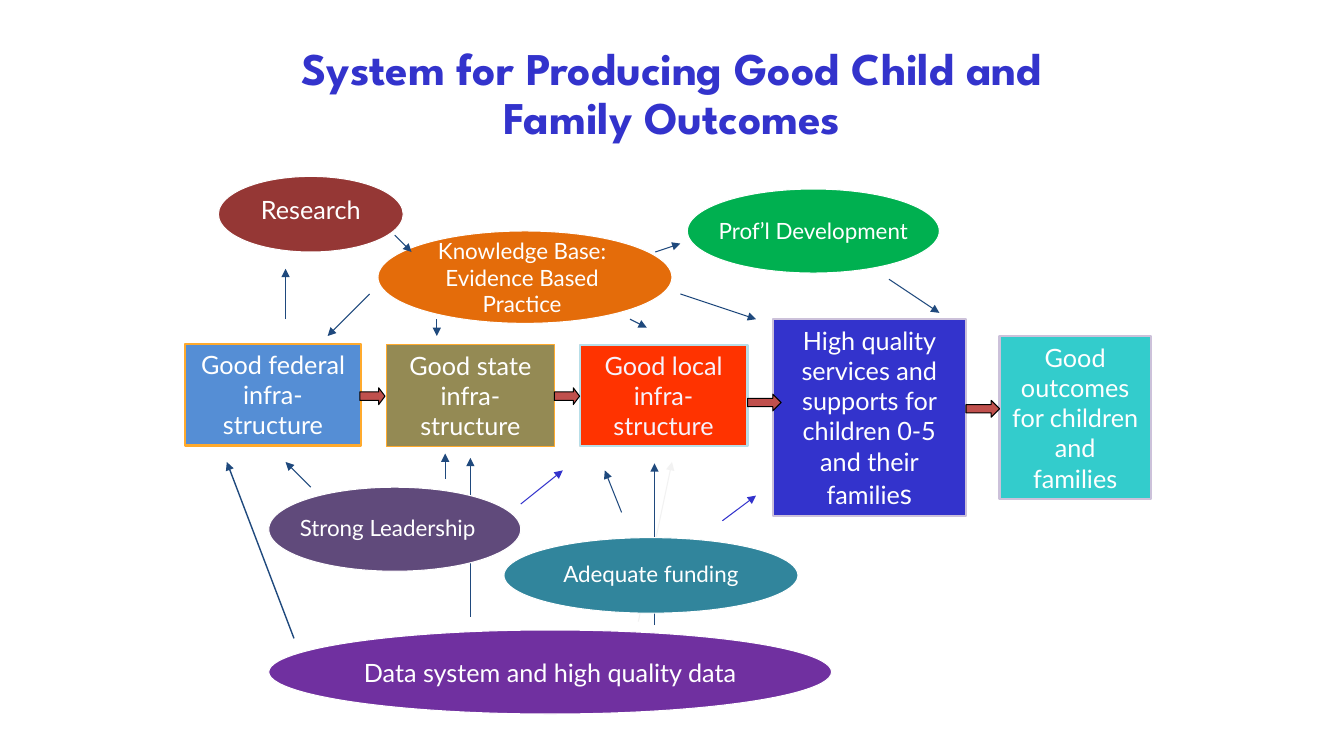
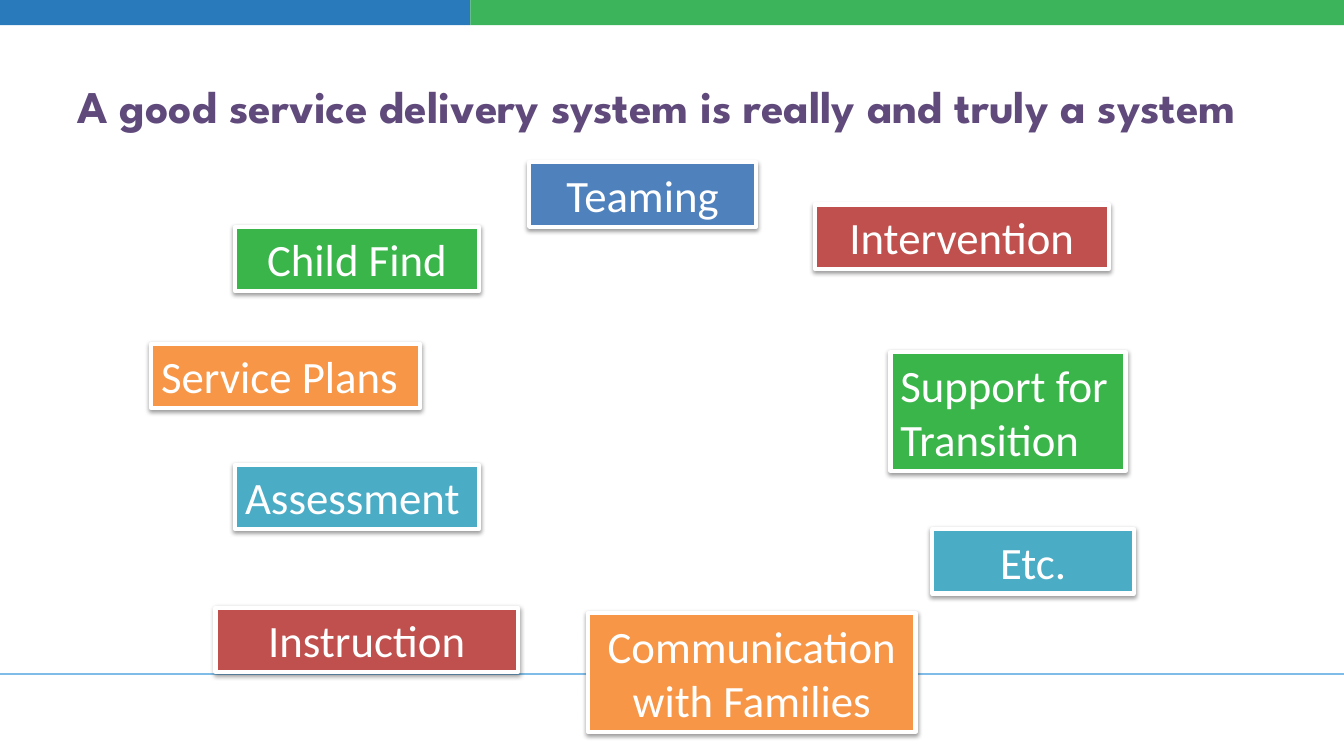
from lxml import etree
from pptx import Presentation
from pptx.dml.color import RGBColor
from pptx.enum.shapes import MSO_CONNECTOR, MSO_SHAPE
from pptx.enum.text import MSO_ANCHOR, MSO_AUTO_SIZE, PP_ALIGN
from pptx.oxml import parse_xml
from pptx.oxml.ns import nsdecls, qn
from pptx.util import Pt

RECT, OVAL, BLOCK_ARROW = MSO_SHAPE.RECTANGLE, MSO_SHAPE.OVAL, MSO_SHAPE.RIGHT_ARROW
STRAIGHT = MSO_CONNECTOR.STRAIGHT
LEFT, CENTER = PP_ALIGN.LEFT, PP_ALIGN.CENTER
MIDDLE, NO_FIT = MSO_ANCHOR.MIDDLE, MSO_AUTO_SIZE.NONE

W, H = 960, 540
TITLE_FONT, BODY_FONT, LABEL_FONT = "League Spartan", "Lato", "Calibri"
WHITE, BLACK = "FFFFFF", "000000"
NAVY, INDIGO, PALE, PLUM = "1F497D", "3333CC", "F2F2F2", "604A7B"
RED, ORANGE, GREEN, AQUA, BLUE = "C0504D", "F79646", "39B54A", "4BACC6", "4F81BD"
GOLD, LILAC = "FFAA2D", "CCC1DA"

# Lengths are points; places are (left, top, width, height).
SYSTEM_TITLE = "System for Producing Good Child and Family Outcomes"
STAGES = [  # text, place, fill, outline, outline width, text colour
    ("Good federal infra-structure", (132, 245.5, 126, 72.7), "558ED5", GOLD, 1.5, WHITE),
    ("Good state infra-structure", (276, 246.2, 120, 72.7), "948A54", GOLD, 1, WHITE),
    ("Good local infra-structure", (414, 246.2, 120, 72.7), "FF3300", "B7DEE8", 1.5, "F7F2FC"),
    ("High quality services and supports for children 0-5 and their familie",
     (552, 228, 138, 140.4), INDIGO, LILAC, 1.5, WHITE),
    ("Good outcomes for children and families",
     (714, 240, 108, 116.6), "33CCCC", LILAC, 1.5, WHITE),
]
SERVICES, LAST_LETTER = 3, "s"
STAGE_ARROWS = [  # place, head proportion
    ((257, 277, 18, 12), 0.375),
    ((396, 277, 18, 12), 0.375),
    ((534, 281.5, 24, 12), 0.5),
    ((690, 286, 24, 12), 0.5),
]
SUPPORTS = [  # text, place, fill, size, wraps, (right inset, bottom inset)
    ("Strong Leadership", (192, 348, 180, 60), PLUM, 16, False, (10, 3)),
    ("Knowledge Base: Evidence Based Practice",
     (270, 165, 210, 66), "E46C0A", 16, True, (4, 0)),
    ("Data system and high quality data", (192, 450, 402, 60), "7030A0", 18, False, (0, 0)),
    ("Research", (156, 126, 132, 54), "953735", 18, False, (0, 7)),
    ("Prof’l Development", (491, 135, 180, 60), "00B050", 16, False, (0, 0)),
    ("Adequate funding", (360, 384, 210, 54), "31859C", 16, False, (0, 3)),
]
ARROWS_BEHIND = [  # x1, y1, x2, y2, colour, width
    (467.5, 446.5, 467.5, 331, NAVY, 1),
    (336, 440.5, 336, 327, NAVY, 1),
    (456, 444, 480, 330, PALE, 0.75),
]
ARROWS_FRONT = [
    (516, 372, 540, 354, INDIGO, 0.75),
    (372, 360, 402, 336, INDIGO, 0.75),
    (635, 199.5, 671, 223.5, NAVY, 0.75),
    (222, 348, 204, 330, NAVY, 0.75),
    (318, 342, 318, 324, NAVY, 0.75),
    (204, 228, 204, 192, NAVY, 0.75),
    (282, 168, 294, 180, NAVY, 0.75),
    (468, 180, 486, 174, NAVY, 0.75),
    (264, 210, 234, 240, NAVY, 0.75),
    (312, 228, 312, 240, NAVY, 0.75),
    (450, 228, 462, 234, NAVY, 0.75),
    (486, 210, 540, 228, NAVY, 0.75),
    (210, 456, 162, 330, NAVY, 1),
    (444, 366, 432, 336, NAVY, 0.75),
]

DELIVERY_TITLE = "A good service delivery system is really and truly a system"
BANDS = [((0, 0, 336, 18), "297ABB"), ((336, 0, W - 336, 18), "3CB45C")]
RULE_Y, RULE_COLOR = 481.7, "7FBCE7"
LINE_HEIGHTS = {1: 46, 2: 84.8}
LABELS = [  # text, left, top, width, lines, fill, alignment
    ("Communication with Families", 420, 438, 234, 2, ORANGE, CENTER),
    ("Instruction", 154, 434, 216, 1, RED, CENTER),
    ("Assessment", 168, 332, 174, 1, AQUA, LEFT),
    ("Service Plans", 108, 245.5, 192, 1, ORANGE, LEFT),
    ("Child Find", 168, 162, 174, 1, GREEN, CENTER),
    ("Teaming", 378, 116, 162, 1, BLUE, CENTER),
    ("Intervention", 582, 146, 210, 1, RED, CENTER),
    ("Support for Transition", 636, 251.5, 168, 2, GREEN, LEFT),
    ("Etc.", 666, 378, 144, 1, AQUA, CENTER),
]


def rgb(color):
    return RGBColor.from_string(color)


def style_text(sp, text, font, size, color, align=CENTER, bold=False, wrap=True):
    tf = sp.text_frame
    tf.text = text
    tf.word_wrap = wrap
    tf.auto_size = NO_FIT
    tf.vertical_anchor = MIDDLE
    p = tf.paragraphs[0]
    p.alignment = align
    f = p.runs[0].font
    f.name, f.size, f.bold = font, Pt(size), bold
    f.color.rgb = rgb(color)
    return tf


def add_titled_slide(prs, text, place, color, align):
    slide = prs.slides.add_slide(prs.slide_layouts[5])
    sp = slide.shapes.title
    sp.left, sp.top, sp.width, sp.height = map(Pt, place)
    tf = style_text(sp, text, TITLE_FONT, 32.4, color, align, bold=True)
    tf.paragraphs[0].line_spacing = 0.9
    return slide


def add_box(slide, kind, place, fill, line=None, width=0.75):
    sp = slide.shapes.add_shape(kind, *map(Pt, place))
    sp.shadow.inherit = False
    sp.fill.solid()
    sp.fill.fore_color.rgb = rgb(fill)
    if line:
        sp.line.color.rgb = rgb(line)
        sp.line.width = Pt(width)
    else:
        sp.line.fill.background()
    return sp


def add_line(slide, x1, y1, x2, y2, color, width, arrow=True):
    c = slide.shapes.add_connector(STRAIGHT, Pt(x1), Pt(y1), Pt(x2), Pt(y2))
    c.line.color.rgb = rgb(color)
    c.line.width = Pt(width)
    if arrow:
        etree.SubElement(c.line._get_or_add_ln(), qn("a:tailEnd"), type="triangle")
    etree.SubElement(c._element.spPr, qn("a:effectLst"))


def add_soft_shadow(sp):
    effects = sp._element.spPr.find(qn("a:effectLst"))
    effects.append(parse_xml(
        f'<a:outerShdw {nsdecls("a")} blurRad="40000" dist="20000" dir="5400000" rotWithShape="0">'
        f'<a:srgbClr val="{BLACK}"><a:alpha val="38000"/></a:srgbClr></a:outerShdw>'))


def build_system_slide(prs):
    slide = add_titled_slide(prs, SYSTEM_TITLE, (164, 23, 632, 90), INDIGO, CENTER)
    for arrow in ARROWS_BEHIND:
        add_line(slide, *arrow)
    for i, (text, place, fill, line, width, color) in enumerate(STAGES):
        sp = add_box(slide, RECT, place, fill, line, width)
        tf = style_text(sp, text, BODY_FONT, 18, color)
        if i == SERVICES:
            r = tf.paragraphs[0].add_run()
            r.text = LAST_LETTER
            r.font.name, r.font.size = BODY_FONT, Pt(20)
            r.font.color.rgb = rgb(color)
    for place, head in STAGE_ARROWS:
        sp = add_box(slide, BLOCK_ARROW, place, RED, BLACK)
        sp.adjustments[1] = head
    for text, place, fill, size, wrap, (right, bottom) in SUPPORTS:
        sp = add_box(slide, OVAL, place, fill, WHITE)
        tf = style_text(sp, text, BODY_FONT, size, WHITE, wrap=wrap)
        tf.margin_left = tf.margin_top = 0
        tf.margin_right, tf.margin_bottom = Pt(right), Pt(bottom)
    for arrow in ARROWS_FRONT:
        add_line(slide, *arrow)


def build_delivery_slide(prs):
    slide = add_titled_slide(prs, DELIVERY_TITLE, (48, 33, 864, 90), PLUM, LEFT)
    for place, fill in BANDS:
        add_box(slide, RECT, place, fill)
    add_line(slide, 0, RULE_Y, W, RULE_Y, RULE_COLOR, 1.5, arrow=False)
    for text, left, top, width, lines, fill, align in LABELS:
        sp = add_box(slide, RECT, (left, top, width, LINE_HEIGHTS[lines]), fill, WHITE, 3)
        add_soft_shadow(sp)
        style_text(sp, text, LABEL_FONT, 32, WHITE, align)


def main():
    prs = Presentation()
    prs.slide_width, prs.slide_height = Pt(W), Pt(H)
    build_system_slide(prs)
    build_delivery_slide(prs)
    prs.save("out.pptx")


if __name__ == "__main__":
    main()
